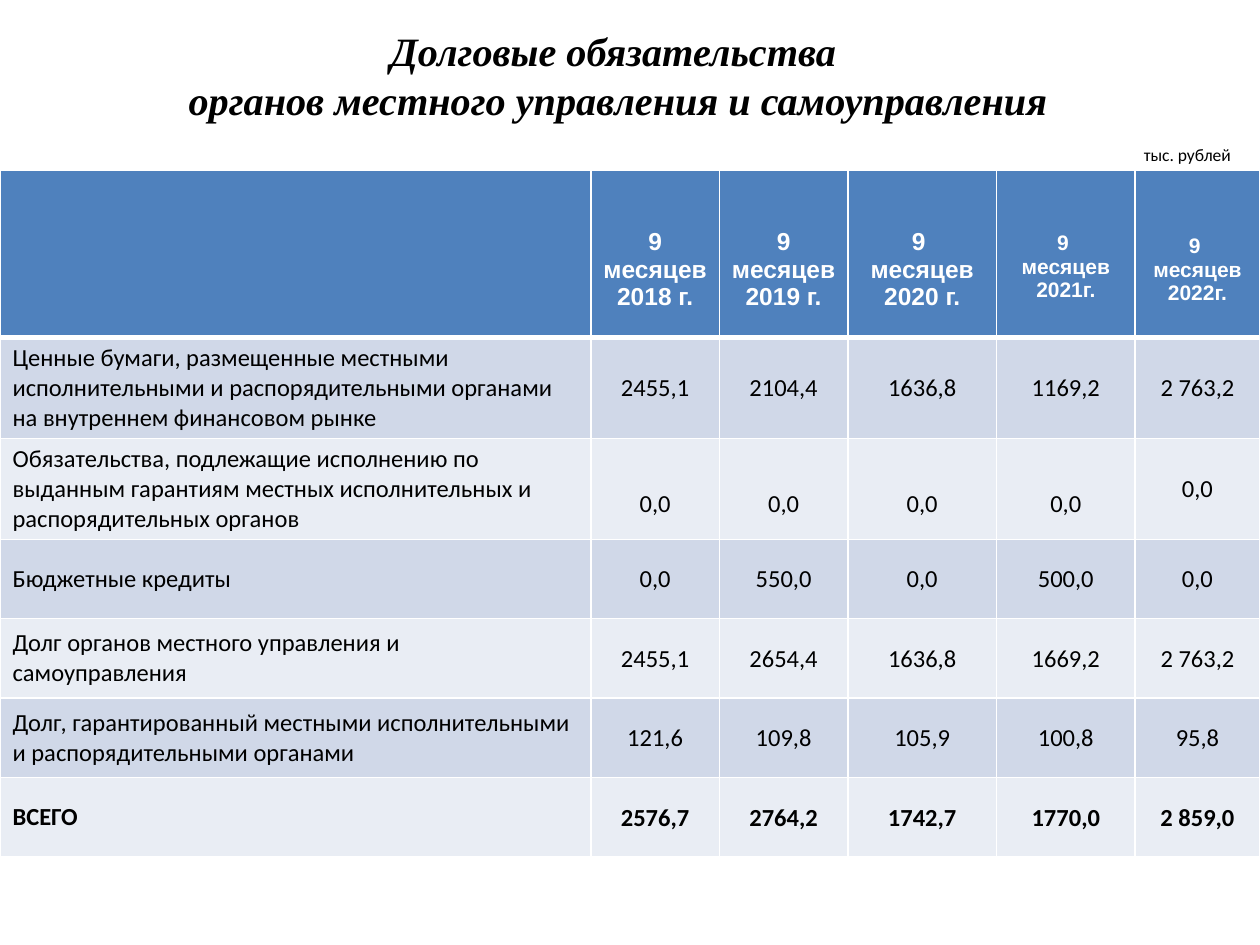
import dataclasses

import lxml.etree
import pptx
import pptx.dml.color
import pptx.enum.text
import pptx.oxml.ns
import pptx.util

Inches = pptx.util.Inches
Pt = pptx.util.Pt
Align = pptx.enum.text.PP_ALIGN
Anchor = pptx.enum.text.MSO_ANCHOR


@dataclasses.dataclass(frozen=True)
class Theme:
    head: str = "4F81BD"
    bands: tuple = ("D0D8E8", "E9EDF4")
    white: str = "FFFFFF"
    black: str = "000000"
    serif: str = "Times New Roman"
    sans: str = "Arial"
    body: str = "Calibri"
    title: float = 23
    cell: float = 14
    small: float = 12
    note: float = 10


@dataclasses.dataclass(frozen=True)
class Font:
    name: str
    size: float
    color: str
    bold: bool = False
    italic: bool = False


@dataclasses.dataclass(frozen=True)
class Head:
    lines: tuple
    size: float
    drop: float  # extra inset above the text, in inches


@dataclasses.dataclass(frozen=True)
class Row:
    label: str
    values: tuple
    height: float
    inset: tuple = (0.01, 0.01, 0.01, 0)
    drops: tuple = (0, 0, 0, 0, 0)
    bold: bool = False


THEME = Theme()
WIDE = (0.1, 0.04, 0.1, 0.04)
SLIM = (0.05, 0.05, 0.05, 0.05)
COLS = (4.69, 1.02, 1.02, 1.18, 1.1, 0.99)
HEAD_H = 1.33
HEADS = (
    Head(("9 месяцев 2018 г.",), THEME.cell, 0.25),
    Head(("9 ", "месяцев", "2019 г."), THEME.cell, 0.25),
    Head(("9 ", "месяцев", "2020 г."), THEME.cell, 0.25),
    Head(("9 ", "месяцев", "2021г."), THEME.small, 0.21),
    Head(("9 ", "месяцев", "2022г."), THEME.small, 0.25),
)
HEADS = (HEADS[0], Head(("9 месяцев", "2019 г."), THEME.cell, 0.25),
         *HEADS[2:])
ROWS = (
    Row("Ценные бумаги, размещенные местными исполнительными и "
        "распорядительными органами на внутреннем финансовом рынке",
        ("2455,1", "2104,4", "1636,8", "1169,2", "2 763,2"), 0.8, WIDE),
    Row("Обязательства, подлежащие исполнению по выданным гарантиям "
        "местных исполнительных и распорядительных органов",
        ("0,0",) * 5, 0.8, WIDE, (0.24,) * 4 + (0,)),
    Row("Бюджетные кредиты",
        ("0,0", "550,0", "0,0", "500,0", "0,0"), 0.63),
    Row("Долг органов местного управления и самоуправления",
        ("2455,1", "2654,4", "1636,8", "1669,2", "2 763,2"), 0.63),
    Row("Долг, гарантированный местными исполнительными и "
        "распорядительными органами",
        ("121,6", "109,8", "105,9", "100,8", "95,8"), 0.63),
    Row("ВСЕГО",
        ("2576,7", "2764,2", "1742,7", "1770,0", "2 859,0"), 0.63,
        bold=True),
)


def rgb(color: str) -> pptx.dml.color.RGBColor:
    return pptx.dml.color.RGBColor.from_string(color)


def add_run(para, text: str, font: Font) -> None:
    run = para.add_run()
    run.text = text
    run.font.name = font.name
    run.font.size = Pt(font.size)
    run.font.bold = font.bold
    run.font.italic = font.italic
    run.font.color.rgb = rgb(font.color)


def set_text(frame, lines: tuple, font: Font, align) -> None:
    for i, line in enumerate(lines):
        para = frame.add_paragraph() if i else frame.paragraphs[0]
        para.alignment = align
        add_run(para, line, font)


def set_cell(cell, fill: str, base: float = 1, inset: tuple = WIDE,
             drop: float = 0) -> None:
    """Give a cell its borders, fill and insets; base is the lower border."""
    props = cell._tc.get_or_add_tcPr()
    for side, width in (("L", 1), ("R", 1), ("T", 1), ("B", base)):
        line = lxml.etree.SubElement(
            props, pptx.oxml.ns.qn("a:ln" + side), w=str(Pt(width)))
        solid = lxml.etree.SubElement(line, pptx.oxml.ns.qn("a:solidFill"))
        lxml.etree.SubElement(
            solid, pptx.oxml.ns.qn("a:srgbClr"), val=THEME.white)
    cell.fill.solid()
    cell.fill.fore_color.rgb = rgb(fill)
    left, top, right, low = inset
    cell.margin_left, cell.margin_right = Inches(left), Inches(right)
    cell.margin_top, cell.margin_bottom = Inches(top + drop), Inches(low)
    cell.vertical_anchor = Anchor.MIDDLE


def add_title(slide) -> None:
    title = slide.shapes.title
    title.left, title.top = Inches(0.41), Inches(-0.03)
    title.width, title.height = Inches(9), Inches(1.25)
    frame = title.text_frame
    frame.auto_size = pptx.enum.text.MSO_AUTO_SIZE.NONE
    frame.vertical_anchor = Anchor.MIDDLE
    para = frame.paragraphs[0]
    para.alignment = Align.CENTER
    font = Font(THEME.serif, THEME.title, THEME.black, True, True)
    add_run(para, "Долговые обязательства ", font)
    para.add_line_break()
    add_run(para, "органов местного управления и самоуправления", font)


def add_note(slide) -> None:
    box = slide.shapes.add_textbox(
        Inches(8.98), Inches(1.09), Inches(0.9), Inches(0.27))
    box.text_frame.word_wrap = False
    set_text(box.text_frame, ("тыс. рублей",),
             Font(THEME.body, THEME.note, THEME.black), Align.LEFT)


def add_debts(slide) -> None:
    highs = (HEAD_H,) + tuple(row.height for row in ROWS)
    table = slide.shapes.add_table(
        len(highs), len(COLS), Inches(0), Inches(1.35),
        Inches(sum(COLS)), Inches(sum(highs))).table
    table.horz_banding = False
    for col, width in zip(table.columns, COLS):
        col.width = Inches(width)
    for line, height in zip(table.rows, highs):
        line.height = Inches(height)

    # Header row, with slim insets so that each word stays whole
    set_cell(table.cell(0, 0), THEME.head, 3)
    for c, head in enumerate(HEADS, 1):
        cell = table.cell(0, c)
        set_cell(cell, THEME.head, 3, SLIM, head.drop)
        set_text(cell.text_frame, head.lines,
                 Font(THEME.sans, head.size, THEME.white, True),
                 Align.CENTER)

    # Body rows in two alternating shades
    for r, row in enumerate(ROWS, 1):
        fill = THEME.bands[(r - 1) % 2]
        font = Font(THEME.body, THEME.cell, THEME.black, row.bold)
        label = table.cell(r, 0)
        set_cell(label, fill)
        set_text(label.text_frame, (row.label,), font, Align.LEFT)
        for c, (value, drop) in enumerate(zip(row.values, row.drops), 1):
            cell = table.cell(r, c)
            set_cell(cell, fill, inset=row.inset, drop=drop)
            set_text(cell.text_frame, (value,), font, Align.CENTER)


def main() -> None:
    deck = pptx.Presentation()
    deck.slide_width, deck.slide_height = Inches(10), Inches(7.5)
    slide = deck.slides.add_slide(deck.slide_layouts[5])
    add_debts(slide)
    add_title(slide)
    add_note(slide)
    deck.save("out.pptx")


if __name__ == "__main__":
    main()
